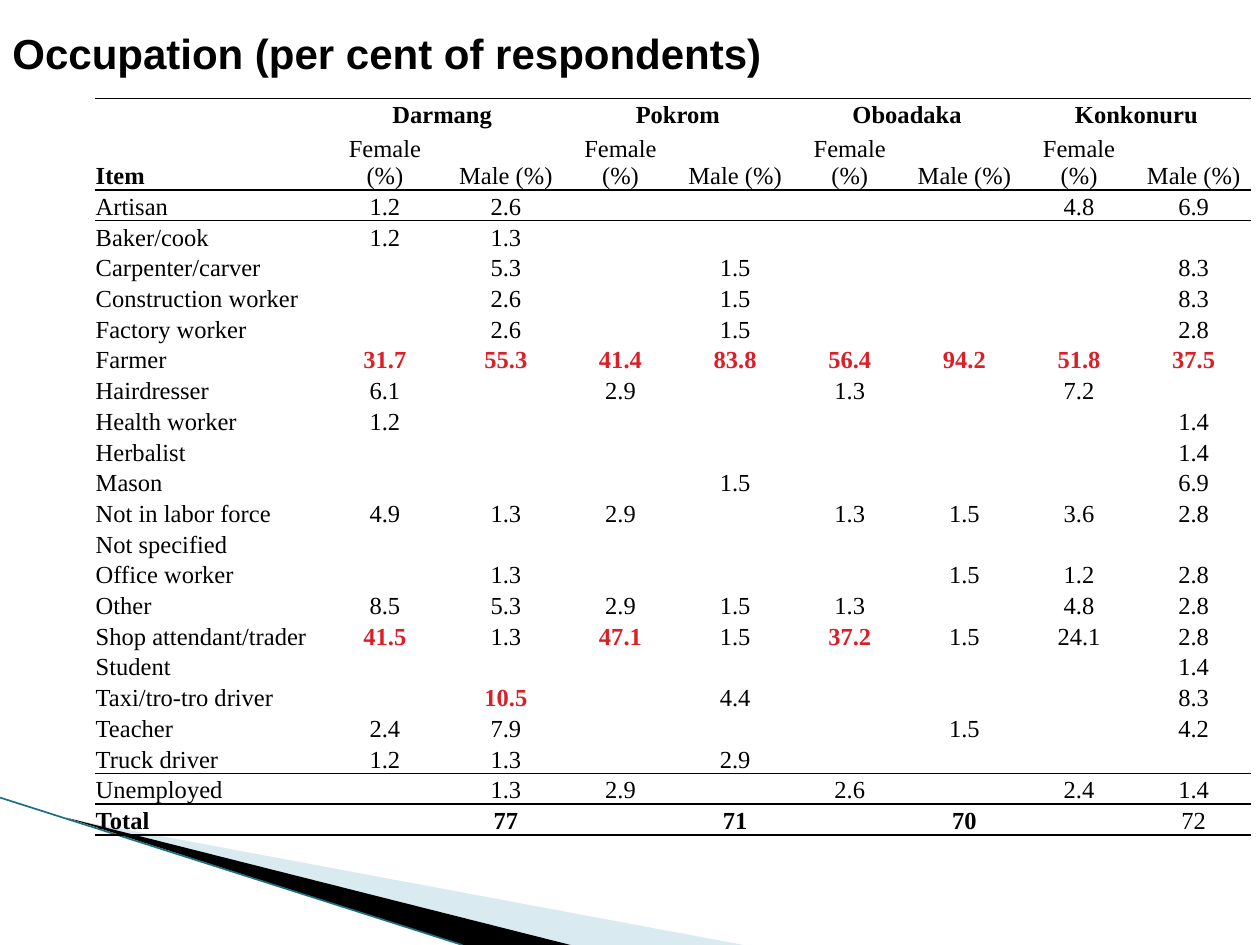
from dataclasses import dataclass
from typing import NamedTuple

from lxml.etree import SubElement
from pptx import Presentation
from pptx.dml.color import RGBColor
from pptx.enum.shapes import MSO_CONNECTOR
from pptx.enum.text import MSO_ANCHOR, PP_ALIGN
from pptx.oxml.ns import qn
from pptx.util import Inches, Pt

WIDTH, HEIGHT = 10, 7.5
BLACK, RED, PALE_BLUE, TEAL = "000000", "DA1F28", "A0CBDC", "1F6F82"
SERIF, SANS = "Times New Roman", "Arial"
NO_STYLE = "{2D5ABB26-0587-4C30-8999-92F81FD0307C}"
ROW_UNIT = 5.81 / 24
COLUMN_WIDTHS = [1.8, 1.01] + [0.91] * 7


class Point(NamedTuple):
    x: float
    y: float


@dataclass
class Wedge:
    corners: list[Point]
    colour: str
    opacity: int = 100


@dataclass
class Occupation:
    name: str
    figures: str
    red: tuple[int, ...] = ()


@dataclass
class Entry:
    lines: tuple[str, ...] = ()
    bold: bool = False
    colour: str = BLACK
    centred: bool = True


VILLAGES = ["Darmang", "Pokrom", "Oboadaka", "Konkonuru"]
OCCUPATIONS = [
    Occupation("Artisan", "1.2 2.6 - - - - 4.8 6.9"),
    Occupation("Baker/cook", "1.2 1.3 - - - - - -"),
    Occupation("Carpenter/carver", "- 5.3 - 1.5 - - - 8.3"),
    Occupation("Construction worker", "- 2.6 - 1.5 - - - 8.3"),
    Occupation("Factory worker", "- 2.6 - 1.5 - - - 2.8"),
    Occupation("Farmer", "31.7 55.3 41.4 83.8 56.4 94.2 51.8 37.5", tuple(range(8))),
    Occupation("Hairdresser", "6.1 - 2.9 - 1.3 - 7.2 -"),
    Occupation("Health worker", "1.2 - - - - - - 1.4"),
    Occupation("Herbalist", "- - - - - - - 1.4"),
    Occupation("Mason", "- - - 1.5 - - - 6.9"),
    Occupation("Not in labor force", "4.9 1.3 2.9 - 1.3 1.5 3.6 2.8"),
    Occupation("Not specified", "- - - - - - - -"),
    Occupation("Office worker", "- 1.3 - - - 1.5 1.2 2.8"),
    Occupation("Other", "8.5 5.3 2.9 1.5 1.3 - 4.8 2.8"),
    Occupation("Shop attendant/trader", "41.5 1.3 47.1 1.5 37.2 1.5 24.1 2.8", (0, 2, 4)),
    Occupation("Student", "- - - - - - - 1.4"),
    Occupation("Taxi/tro-tro driver", "- 10.5 - 4.4 - - - 8.3", (1,)),
    Occupation("Teacher", "2.4 7.9 - - - 1.5 - 4.2"),
    Occupation("Truck driver", "1.2 1.3 - 2.9 - - - -"),
    Occupation("Unemployed", "- 1.3 2.9 - 2.6 - 2.4 1.4"),
]
TOTALS = "- 77 - 71 - 70 - 72"
WEDGES = [
    Wedge([Point(0.55, 6.5), Point(5.9, 7.5), Point(4.53, 7.5)], PALE_BLUE, 40),
    Wedge([Point(0.53, 6.49), Point(4.53, 7.5), Point(3.67, 7.5)], BLACK),
]


def rgb(colour: str) -> RGBColor:
    return RGBColor.from_string(colour)


def add_text(paragraph, text: str, size: int, font: str, colour: str, bold: bool) -> None:
    run = paragraph.add_run()
    run.text = text
    run.font.size, run.font.name, run.font.bold = Pt(size), font, bold
    run.font.color.rgb = rgb(colour)


def draw_wedge(slide, wedge: Wedge) -> None:
    start, *rest = [(Inches(x), Inches(y)) for x, y in wedge.corners]
    builder = slide.shapes.build_freeform(*start)
    builder.add_line_segments(rest, close=True)
    shape = builder.convert_to_shape()
    shape.shadow.inherit = False
    shape.fill.solid()
    shape.fill.fore_color.rgb = rgb(wedge.colour)
    shape.line.fill.background()
    if wedge.opacity < 100:
        tint = shape.fill._xPr.find(".//" + qn("a:srgbClr"))
        SubElement(tint, qn("a:alpha"), val=str(wedge.opacity * 1000))


def draw_edge(slide, start: Point, end: Point) -> None:
    edge = slide.shapes.add_connector(
        MSO_CONNECTOR.STRAIGHT, *(Inches(v) for v in (*start, *end))
    )
    edge.line.color.rgb = rgb(TEAL)
    edge.line.width = Pt(0.95)
    SubElement(edge._element.spPr, qn("a:effectLst"))


def draw_title(slide, title: str) -> None:
    box = slide.shapes.add_textbox(0, Inches(0.17), Inches(9.58), Inches(0.5))
    frame = box.text_frame
    frame.word_wrap = True
    frame.vertical_anchor = MSO_ANCHOR.MIDDLE
    add_text(frame.paragraphs[0], title, 24, SANS, BLACK, True)


def add_rule(cell, side: str) -> None:
    rule = SubElement(cell._tc.get_or_add_tcPr(), qn(f"a:{side}"), w=str(Pt(1)))
    fill = SubElement(rule, qn("a:solidFill"))
    SubElement(fill, qn("a:srgbClr"), val=BLACK)


def fill_cell(cell, entry: Entry) -> None:
    cell.margin_left = cell.margin_right = cell.margin_top = Inches(0.01)
    cell.margin_bottom = 0
    cell.vertical_anchor = MSO_ANCHOR.BOTTOM
    cell.fill.background()
    frame = cell.text_frame
    for index, line in enumerate(entry.lines):
        paragraph = frame.add_paragraph() if index else frame.paragraphs[0]
        paragraph.alignment = PP_ALIGN.CENTER if entry.centred else PP_ALIGN.LEFT
        add_text(paragraph, line, 14, SERIF, entry.colour, entry.bold)
    if not entry.lines:
        SubElement(frame.paragraphs[0]._p, qn("a:endParaRPr"), sz="1400")


def figure_entries(figures: str, red=(), bold=()) -> list[Entry]:
    return [
        Entry() if figure == "-"
        else Entry((figure,), column in red or column in bold, RED if column in red else BLACK)
        for column, figure in enumerate(figures.split())
    ]


def table_rows() -> list[list[Entry]]:
    villages, sexes = [Entry()], [Entry(("Item",), True, centred=False)]
    for index, village in enumerate(VILLAGES):
        villages += [Entry((village,), True), Entry()]
        female = ("Female (%)",) if index else ("Female", "(%)")
        sexes += [Entry(female), Entry(("Male (%)",))]
    body = [
        [Entry((job.name,), centred=False)] + figure_entries(job.figures, job.red)
        for job in OCCUPATIONS
    ]
    total = [Entry(("Total",), True, centred=False)] + figure_entries(TOTALS, bold=(1, 3, 5))
    return [villages, sexes, *body, total]


def draw_table(slide) -> None:
    rows = table_rows()
    last = len(rows) - 1
    table = slide.shapes.add_table(
        len(rows), len(COLUMN_WIDTHS), Inches(0.75), Inches(0.78),
        Inches(sum(COLUMN_WIDTHS)), Inches(ROW_UNIT * 24),
    ).table
    table.first_row = table.horz_banding = False
    table._tbl.tblPr.find(qn("a:tableStyleId")).text = NO_STYLE
    for column, width in zip(table.columns, COLUMN_WIDTHS):
        column.width = Inches(width)
    for left in range(1, len(COLUMN_WIDTHS), 2):
        table.cell(0, left).merge(table.cell(0, left + 1))
    for row, entries in enumerate(rows):
        table.rows[row].height = Inches(ROW_UNIT * (2 if row == 1 else 1))
        for column, entry in enumerate(entries):
            cell = table.cell(row, column)
            if row in (0, 2, last - 1):
                add_rule(cell, "lnT")
            if row in (1, last - 2, last):
                add_rule(cell, "lnB")
            fill_cell(cell, entry)


def main() -> None:
    deck = Presentation()
    deck.slide_width, deck.slide_height = Inches(WIDTH), Inches(HEIGHT)
    slide = deck.slides.add_slide(deck.slide_layouts[6])
    for wedge in WEDGES:
        draw_wedge(slide, wedge)
    draw_edge(slide, Point(0, 6.33), Point(3.67, HEIGHT))
    draw_title(slide, "Occupation (per cent of respondents)")
    draw_table(slide)
    deck.save("out.pptx")


if __name__ == "__main__":
    main()
